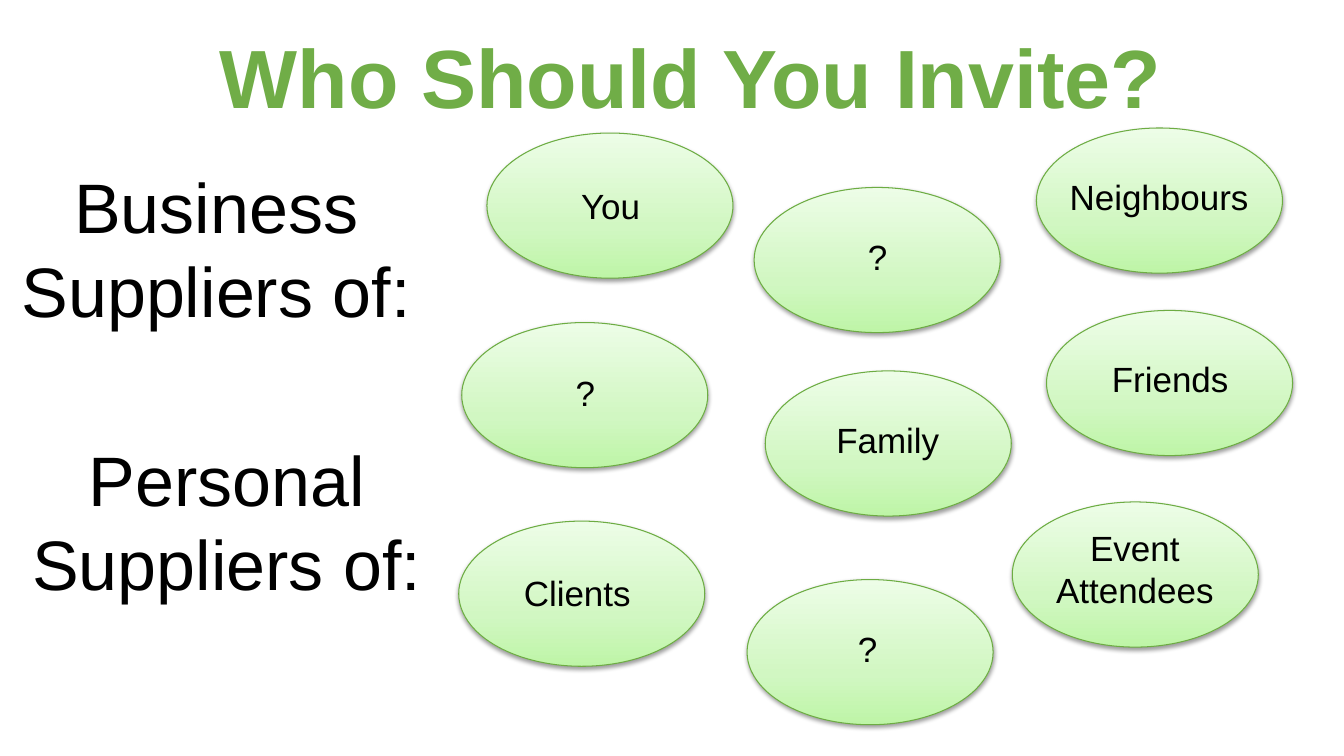
from copy import deepcopy
from dataclasses import dataclass
from lxml.etree import SubElement
from pptx import Presentation
from pptx.dml.color import RGBColor
from pptx.enum.shapes import MSO_SHAPE
from pptx.enum.text import MSO_ANCHOR, MSO_AUTO_SIZE, PP_ALIGN
from pptx.oxml.ns import qn
from pptx.util import Emu, Pt


@dataclass(frozen=True)
class Theme:
    font: str = "Arial"
    title: str = "70AD47"
    ink: str = "000000"
    edge: str = "6DAC43"
    fade: tuple = ((0, "BEF5A7"), (0.35, "D1F7C2"), (1, "EDFDE7"))
    big: int = 59
    mid: int = 50
    small: int = 25


THEME = Theme()
SCALE = 9144  # EMU per px, 100 px to the inch
OVAL = 244, 144

HEADS = [
    ("Business Suppliers of:", (-23, 157, 475, 178)),
    ("Personal Suppliers of:", (21, 428, 408, 178)),
]

# label, left and top of the oval, offset of the label from it
GUESTS = [
    ("Clients", 455, 517, -15, 45),
    ("Family", 759, 368, -11, 42),
    ("Neighbours", 1028, 127, -11, 42),
    ("You", 483, 132, -10, 46),
    ("Event Attendees", 1004, 498, -11, 19),
    ("?", 741, 575, -13, 43),
    ("Friends", 1038, 308, -10, 42),
    ("?", 748, 186, -10, 43),
    ("?", 458, 320, -10, 44),
]


def px(*sizes):
    return [Emu(size * SCALE) for size in sizes]


def write(shape, text, size, color=THEME.ink, bold=False, space=None,
          fit=MSO_AUTO_SIZE.SHAPE_TO_FIT_TEXT, anchor=MSO_ANCHOR.TOP):
    frame = shape.text_frame
    frame.word_wrap = True
    frame.auto_size = fit
    frame.vertical_anchor = anchor
    para = frame.paragraphs[0]
    para.text = text
    para.alignment = PP_ALIGN.CENTER
    para.line_spacing = space
    font = para.runs[0].font
    font.name, font.size, font.bold = THEME.font, Pt(size), bold
    font.color.rgb = RGBColor.from_string(color)


def label(slide, text, box, size):
    write(slide.shapes.add_textbox(*px(*box)), text, size)


def title(slide, text, box):
    shape = slide.shapes.title
    shape.left, shape.top, shape.width, shape.height = px(*box)
    write(shape, text, THEME.big, color=THEME.title, bold=True, space=0.9,
          fit=MSO_AUTO_SIZE.NONE, anchor=MSO_ANCHOR.MIDDLE)


def shade(shape):
    """Fill with the three-stop fade, light at the top."""
    fill = shape.fill
    fill.gradient()
    fill.gradient_angle = 90
    stops = shape.element.spPr.find(qn("a:gradFill")).find(qn("a:gsLst"))
    stops.append(deepcopy(stops[0]))
    for stop, (place, color) in zip(fill.gradient_stops, THEME.fade):
        stop.position = place
        stop.color.rgb = RGBColor.from_string(color)


def shadow(shape):
    shape.shadow.inherit = False
    effects = shape.element.spPr.find(qn("a:effectLst"))
    outer = SubElement(effects, qn("a:outerShdw"), blurRad="40000",
                       dist="20000", dir="5400000", rotWithShape="0")
    color = SubElement(outer, qn("a:srgbClr"), val=THEME.ink)
    SubElement(color, qn("a:alpha"), val="38000")


def guest(slide, text, left, top, dx, dy):
    oval = slide.shapes.add_shape(MSO_SHAPE.OVAL, *px(left, top, *OVAL))
    shade(oval)
    oval.line.color.rgb = RGBColor.from_string(THEME.edge)
    oval.line.width = Pt(0.75)
    shadow(oval)
    high = 94 if " " in text else 52
    label(slide, text, (left + dx, top + dy, 265, high), THEME.small)


def main():
    deck = Presentation()
    deck.slide_width, deck.slide_height = px(1333, 750)
    slide = deck.slides.add_slide(deck.slide_layouts[5])
    title(slide, "Who Should You Invite?", (65, 22, 1241, 118))
    for text, box in HEADS:
        label(slide, text, box, THEME.mid)
    for item in GUESTS:
        guest(slide, *item)
    deck.save("out.pptx")


if __name__ == "__main__":
    main()
